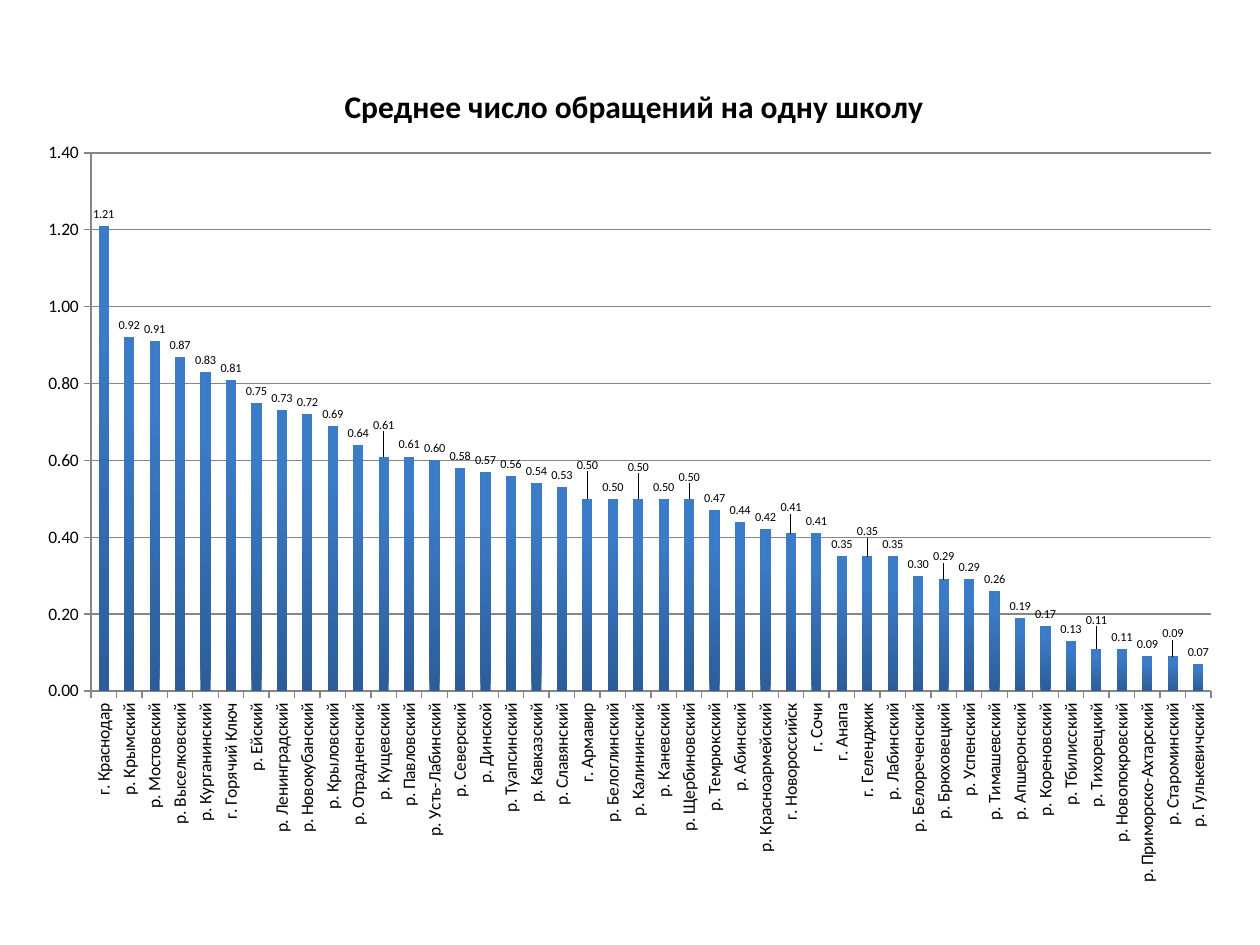
from dataclasses import dataclass

from lxml.etree import SubElement
from pptx import Presentation
from pptx.chart.data import CategoryChartData
from pptx.dml.color import RGBColor
from pptx.enum.chart import XL_CHART_TYPE, XL_LABEL_POSITION, XL_TICK_MARK
from pptx.oxml.ns import qn
from pptx.util import Emu, Pt

PX = 914400 // 126

TITLE = "Среднее число обращений на одну школу"
REQUESTS = [
    ("г. Краснодар", 1.21), ("р. Крымский", 0.92), ("р. Мостовский", 0.91),
    ("р. Выселковский", 0.87), ("р. Курганинский", 0.83), ("г. Горячий Ключ", 0.81),
    ("р. Ейский", 0.75), ("р. Ленинградский", 0.73), ("р. Новокубанский", 0.72),
    ("р. Крыловский", 0.69), ("р. Отрадненский", 0.64), ("р. Кущевский", 0.61),
    ("р. Павловский", 0.61), ("р. Усть-Лабинский", 0.60), ("р. Северский", 0.58),
    ("р. Динской", 0.57), ("р. Туапсинский", 0.56), ("р. Кавказский", 0.54),
    ("р. Славянский", 0.53), ("г. Армавир", 0.50), ("р. Белоглинский", 0.50),
    ("р. Калининский", 0.50), ("р. Каневский", 0.50), ("р. Щербиновский", 0.50),
    ("р. Темрюкский", 0.47), ("р. Абинский", 0.44), ("р. Красноармейский", 0.42),
    ("г. Новороссийск", 0.41), ("г. Сочи", 0.41), ("г. Анапа", 0.35),
    ("г. Геленджик", 0.35), ("р. Лабинский", 0.35), ("р. Белореченский", 0.30),
    ("р. Брюховецкий", 0.29), ("р. Успенский", 0.29), ("р. Тимашевский", 0.26),
    ("р. Апшеронский", 0.19), ("р. Кореновский", 0.17), ("р. Тбилисский", 0.13),
    ("р. Тихорецкий", 0.11), ("р. Новопокровский", 0.11),
    ("р. Приморско-Ахтарский", 0.09), ("р. Староминский", 0.09),
    ("р. Гулькевичский", 0.07),
]
# Labels lifted clear of their neighbours: point index to px
LABEL_LIFTS = {11: 20, 19: 22, 21: 20, 23: 10, 27: 14, 30: 13, 33: 11, 39: 17, 42: 11}


@dataclass(frozen=True)
class Theme:
    font: str = "Calibri"
    text: str = "000000"
    rule: str = "868686"
    bar_bottom: str = "2C5D98"
    bar_top: str = "3C7BC7"
    title_size: int = 18
    axis_size: int = 10
    label_size: int = 7


def set_values(target, values):
    for name, value in values.items():
        setattr(target, name, value)


def set_layout(parent, position, **values):
    """Replace the manual layout of a chart part, placing it at the given child index."""
    for old in parent.findall(qn("c:layout")):
        parent.remove(old)
    layout = parent.makeelement(qn("c:layout"))
    parent.insert(position, layout)
    manual = SubElement(layout, qn("c:manualLayout"))
    for name, value in values.items():
        if isinstance(value, float):
            value = round(value, 4)
        SubElement(manual, qn(f"c:{name}")).set("val", str(value))


class SlideBuilder:
    def __init__(self, deck, theme):
        self.theme = theme
        self.page = deck.slides.add_slide(deck.slide_layouts[6])

    def style_font(self, font, size, bold=False):
        set_values(font, {"name": self.theme.font, "size": Pt(size), "bold": bold})
        font.color.rgb = RGBColor.from_string(self.theme.text)

    def style_rule(self, line):
        line.width = Pt(0.75)
        line.color.rgb = RGBColor.from_string(self.theme.rule)

    def column_chart(self, rows, left, top, width, height):
        data = CategoryChartData(number_format="0.00")
        data.categories = [name for name, _ in rows]
        data.add_series("Series 1", [value for _, value in rows])
        frame = self.page.shapes.add_chart(
            XL_CHART_TYPE.COLUMN_CLUSTERED,
            *(Emu(length * PX) for length in (left, top, width, height)), data)
        chart = frame.chart
        chart.has_legend = False
        self.style_font(chart.font, self.theme.axis_size)
        set_values(chart.plots[0], {"gap_width": 150, "vary_by_categories": False})
        return chart

    def chart_title(self, chart, text, x, y):
        """Place the title by its top left corner, in shares of the chart."""
        title = chart.chart_title
        title.text_frame.text = text
        span = title.text_frame.paragraphs[0].runs[0]
        self.style_font(span.font, self.theme.title_size, bold=True)
        title.include_in_layout = False
        set_layout(title._element, 1, xMode="edge", yMode="edge", x=x, y=y)

    def axes(self, chart):
        values, categories = chart.value_axis, chart.category_axis
        set_values(values, {"minimum_scale": 0, "maximum_scale": 1.4,
                            "major_unit": 0.2, "has_major_gridlines": True})
        self.style_rule(values.major_gridlines.format.line)
        set_values(values.tick_labels, {"number_format": "0.00",
                                        "number_format_is_linked": False})
        for axis in (values, categories):
            axis.major_tick_mark = XL_TICK_MARK.OUTSIDE
            self.style_rule(axis.format.line)
            self.style_font(axis.tick_labels.font, self.theme.axis_size)
        body = categories._element.find(qn("c:txPr")).find(qn("a:bodyPr"))
        body.set("rot", "-5400000")
        body.set("vert", "horz")

    def bars(self, series):
        fill = series.format.fill
        fill.gradient()
        fill.gradient_angle = 90
        stops = zip(fill.gradient_stops, (0, 0.8),
                    (self.theme.bar_bottom, self.theme.bar_top))
        for stop, position, color in stops:
            stop.position = position
            stop.color.rgb = RGBColor.from_string(color)
        series.format.line.fill.background()

    def value_labels(self, series, lifts, chart_height):
        labels = series.data_labels
        set_values(labels, {"show_value": True, "number_format": "0.00",
                            "number_format_is_linked": False,
                            "position": XL_LABEL_POSITION.OUTSIDE_END})
        self.style_font(labels.font, self.theme.label_size)
        for index in lifts:
            label = series.points[index].data_label
            label.position = XL_LABEL_POSITION.OUTSIDE_END
            self.style_font(label.font, self.theme.label_size)
        for label in series._element.iter(qn("c:dLbl")):
            lift = lifts[int(label.find(qn("c:idx")).get("val"))]
            set_layout(label, 1, x=0, y=-lift / chart_height)


def main():
    deck = Presentation()
    set_values(deck, {"slide_width": Emu(1260 * PX), "slide_height": Emu(945 * PX)})
    builder = SlideBuilder(deck, Theme())

    left, top, width, height = 24, 45, 1211, 854
    chart = builder.column_chart(REQUESTS, left, top, width, height)
    builder.chart_title(chart, TITLE, x=0.26, y=0.04)
    builder.axes(chart)
    set_layout(chart._chartSpace.chart.plotArea, 0,
               layoutTarget="inner", xMode="edge", yMode="edge",
               x=(91 - left) / width, y=(153 - top) / height,
               w=1120 / width, h=538 / height)
    series = chart.plots[0].series[0]
    builder.bars(series)
    builder.value_labels(series, LABEL_LIFTS, height)
    deck.save("out.pptx")


if __name__ == "__main__":
    main()
